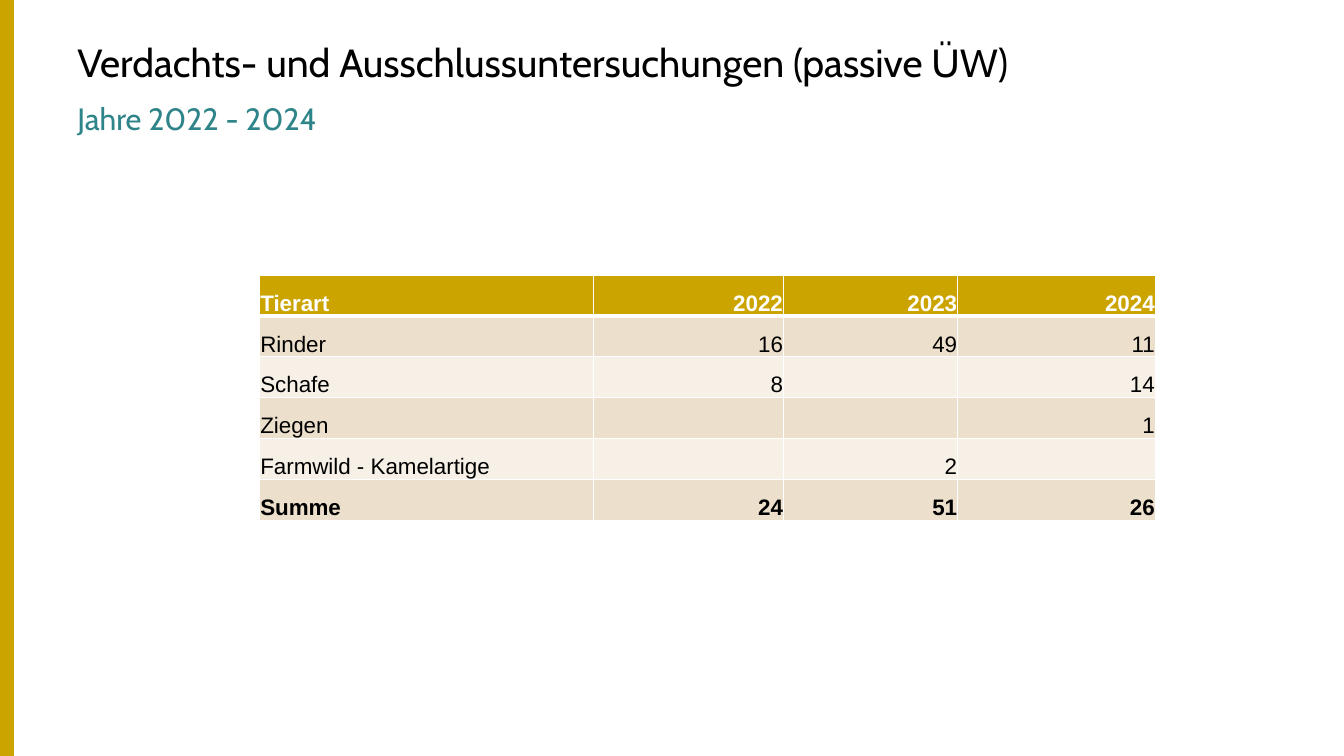
from dataclasses import dataclass

from lxml import etree
from pptx import Presentation
from pptx.dml.color import RGBColor
from pptx.enum import shapes, text
from pptx.oxml.ns import qn
from pptx.util import Cm, Pt

COLORS = {
    "gold": "CCA400",
    "teal": "2E8488",
    "sand": "ECE0CC",
    "cream": "F6F0E7",
    "white": "FFFFFF",
    "black": "000000",
}


@dataclass
class Heading:
    text: str
    top: float
    height: float
    inset_top: float
    size: int
    color: str
    line_pt: int | None = None


HEADINGS = [
    Heading("Verdachts- und Ausschlussuntersuchungen (passive ÜW)",
            0.97, 1.32, 0, 28, "black"),
    Heading("Jahre 2022 - 2024", 2.46, 0.97, 0.1, 22, "teal", 25),
]

ROWS = [
    ("Tierart", "2022", "2023", "2024"),
    ("Rinder", "16", "49", "11"),
    ("Schafe", "8", "", "14"),
    ("Ziegen", "", "", "1"),
    ("Farmwild - Kamelartige", "", "2", ""),
    ("Summe", "24", "51", "26"),
]
COL_WIDTHS = (8.41, 4.8, 4.39, 4.98)
ROW_HEIGHT = 1.03


def rgb(name: str) -> RGBColor:
    return RGBColor.from_string(COLORS[name])


def set_text(tf, content: str, *, size: int, font: str, color: str,
             bold: bool = False, align=text.PP_ALIGN.LEFT) -> None:
    p = tf.paragraphs[0]
    p.alignment = align
    if content:
        r = p.add_run()
        r.text = content
        r.font.size = Pt(size)
        r.font.name = font
        r.font.bold = bold
        r.font.color.rgb = rgb(color)


def set_margins(box, left: float, top: float, right: float, bottom: float) -> None:
    box.margin_left, box.margin_top = Cm(left), Cm(top)
    box.margin_right, box.margin_bottom = Cm(right), Cm(bottom)


def add_heading(slide, item: Heading) -> None:
    sp = slide.shapes.add_textbox(Cm(1.7), Cm(item.top), Cm(26.75), Cm(item.height))
    tf = sp.text_frame
    tf.word_wrap = True
    set_margins(tf, 0.25, item.inset_top, 0.25, 0.13)
    set_text(tf, item.text, size=item.size, font="Cabin", color=item.color)
    if item.line_pt:
        tf.paragraphs[0].line_spacing = Pt(item.line_pt)


def set_borders(cell, widths: dict[str, int]) -> None:
    tc_pr = cell._tc.get_or_add_tcPr()
    for side, width in widths.items():
        ln = etree.SubElement(tc_pr, qn(f"a:ln{side}"), w=str(Pt(width)))
        fill = etree.SubElement(ln, qn("a:solidFill"))
        etree.SubElement(fill, qn("a:srgbClr"), val=COLORS["white"])


def add_species_table(slide) -> None:
    table = slide.shapes.add_table(
        len(ROWS), len(COL_WIDTHS), Cm(6.54), Cm(6.93),
        Cm(sum(COL_WIDTHS)), Cm(ROW_HEIGHT * len(ROWS))).table
    for column, width in zip(table.columns, COL_WIDTHS):
        column.width = Cm(width)
    for i, values in enumerate(ROWS):
        table.rows[i].height = Cm(ROW_HEIGHT)
        header = i == 0
        band = "gold" if header else "sand" if i % 2 else "cream"
        for j, value in enumerate(values):
            cell = table.cell(i, j)
            set_margins(cell, 0.02, 0.02, 0.02, 0)
            cell.vertical_anchor = text.MSO_ANCHOR.BOTTOM
            set_borders(cell, {"L": 1, "R": 1, "T": 3 if i == 1 else 1,
                               "B": 3 if header else 1})
            cell.fill.solid()
            cell.fill.fore_color.rgb = rgb(band)
            set_text(cell.text_frame, value, size=16, font="Arial",
                     color="white" if header else "black",
                     bold=header or i == len(ROWS) - 1,
                     align=text.PP_ALIGN.RIGHT if j else text.PP_ALIGN.LEFT)


def main() -> None:
    prs = Presentation()
    prs.slide_width, prs.slide_height = Cm(33.87), Cm(19.05)
    slide = prs.slides.add_slide(prs.slide_layouts[6])

    # Side bar
    bar = slide.shapes.add_shape(shapes.MSO_SHAPE.RECTANGLE,
                                 0, 0, Cm(0.33), prs.slide_height)
    bar.shadow.inherit = False
    bar.fill.solid()
    bar.fill.fore_color.rgb = rgb("gold")
    bar.line.color.rgb = rgb("gold")
    bar.line.width = Pt(1)

    # Title and subtitle
    for item in HEADINGS:
        add_heading(slide, item)

    # Examinations by species and year
    add_species_table(slide)

    prs.save("out.pptx")


if __name__ == "__main__":
    main()
